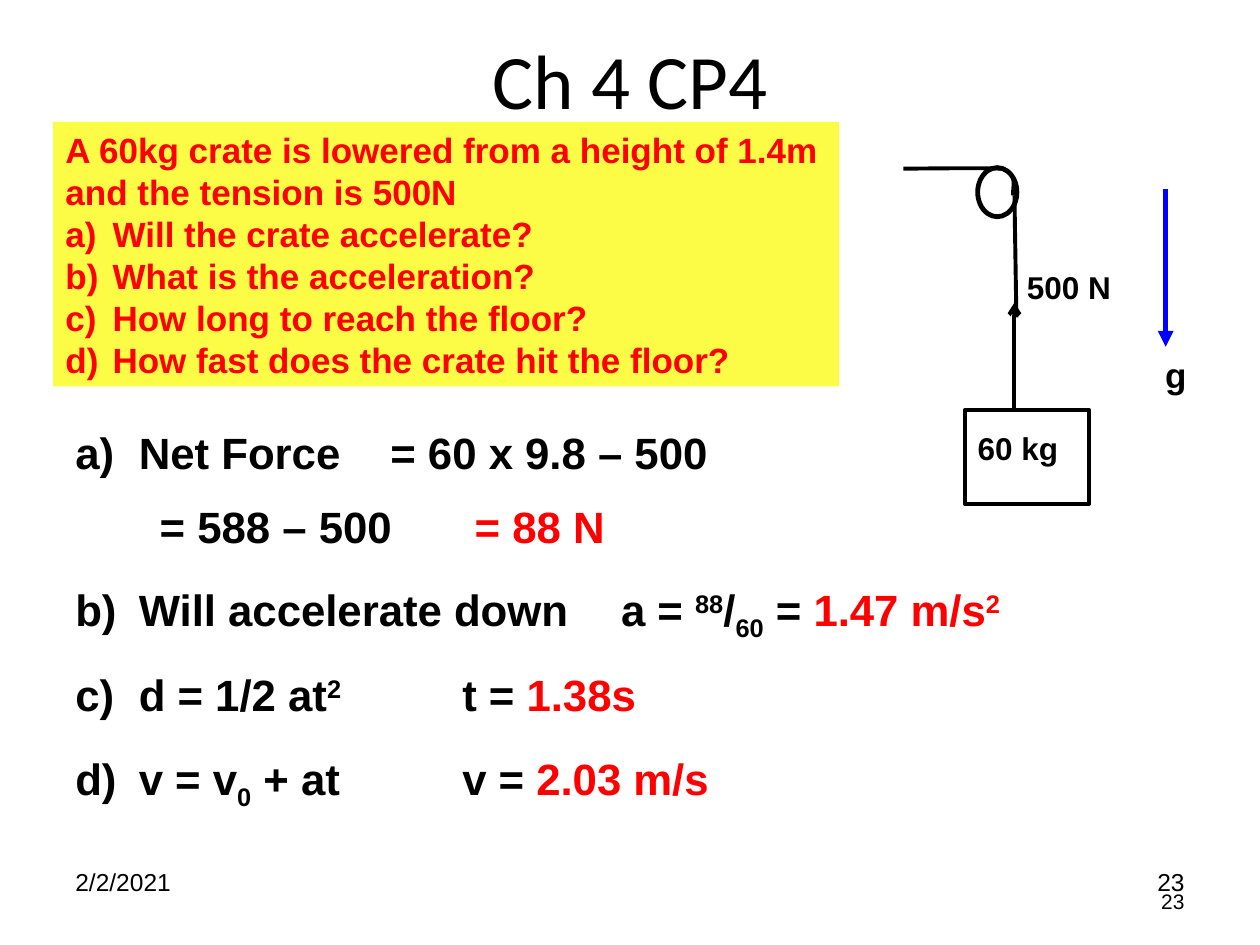
"""Build a physics slide about a crate lowered on a rope."""
from lxml import etree
from pptx import Presentation
from pptx.dml.color import RGBColor
from pptx.enum.shapes import MSO_CONNECTOR, MSO_SHAPE
from pptx.enum.text import MSO_ANCHOR, PP_ALIGN
from pptx.oxml.ns import qn
from pptx.util import Cm, Pt

BLACK = RGBColor(0, 0, 0)
RED = RGBColor(255, 0, 0)
BLUE = RGBColor(0, 0, 255)
YELLOW = RGBColor(0xFC, 0xFC, 0x46)
LEFT, MID, RIGHT = PP_ALIGN.LEFT, PP_ALIGN.CENTER, PP_ALIGN.RIGHT
TOP, CENTER = MSO_ANCHOR.TOP, MSO_ANCHOR.MIDDLE
RECT, OVAL = MSO_SHAPE.RECTANGLE, MSO_SHAPE.OVAL
LINE = MSO_CONNECTOR.STRAIGHT
SUP, SUB = 30000, -25000


def write(par, text, size=25, bold=True, color=BLACK, font="Arial", base=0):
    run = par.add_run()
    run.text = text
    run.font.size = Pt(size)
    run.font.bold = bold
    run.font.name = font
    run.font.color.rgb = color
    if base:
        run._r.get_or_add_rPr().set("baseline", str(base))


def bend(start, curves, steps=8):
    points = [start]
    for a, b, end in curves:
        first = points[-1]
        for step in range(1, steps + 1):
            t = step / steps
            u = 1 - t
            points.append(tuple(
                u**3 * p + 3 * u * u * t * q + 3 * u * t * t * r + t**3 * s
                for p, q, r, s in zip(first, a, b, end)))
    return points


class Page:
    def __init__(self, slide):
        self.slide = slide
        self.shapes = slide.shapes

    def text(self, box, parts, align=LEFT, anchor=TOP, wrap=True, tabs=(), **style):
        shape = self.shapes.add_textbox(*map(Cm, box))
        frame = shape.text_frame
        frame.word_wrap = wrap
        frame.vertical_anchor = anchor
        par = frame.paragraphs[0]
        par.alignment = align
        if tabs:
            stops = etree.SubElement(par._p.get_or_add_pPr(), qn("a:tabLst"))
            for stop in tabs:
                etree.SubElement(stops, qn("a:tab"), pos=str(Cm(stop)), algn="l")
        for text, extra in parts:
            write(par, text, **{**style, **extra})

    def shape(self, kind, box, fill=None, width=None):
        shape = self.shapes.add_shape(kind, *map(Cm, box))
        self.paint(shape, fill, width)
        return shape

    def paint(self, shape, fill, width):
        shape.shadow.inherit = False
        if fill is None:
            shape.fill.background()
        else:
            shape.fill.solid()
            shape.fill.fore_color.rgb = fill
        if width is None:
            shape.line.fill.background()
        else:
            shape.line.color.rgb = BLACK
            shape.line.width = Pt(width)

    def line(self, ends, color=BLACK, width=2.25, head=None):
        line = self.shapes.add_connector(LINE, *map(Cm, ends))
        line.line.color.rgb = color
        line.line.width = Pt(width)
        if head:
            etree.SubElement(line.line._get_or_add_ln(), qn("a:tailEnd"), type=head)
        etree.SubElement(line._element.spPr, qn("a:effectLst"))

    def curve(self, points, width=2.25):
        spots = [(Cm(x), Cm(y)) for x, y in points]
        path = self.shapes.build_freeform(*spots[0])
        path.add_line_segments(spots[1:], close=False)
        self.paint(path.convert_to_shape(), None, width)

    def task(self, box, intro, items):
        frame = self.shape(RECT, box, YELLOW).text_frame
        frame.word_wrap = False
        frame.vertical_anchor = TOP
        for i, text in enumerate(intro + items):
            par = frame.paragraphs[0] if i == 0 else frame.add_paragraph()
            par.alignment = LEFT
            props = par._p.get_or_add_pPr()
            props.set("marL", str(Cm(0.95)))
            props.set("indent", str(-Cm(0.95)))
            if i >= len(intro):
                etree.SubElement(props, qn("a:buFont"), typeface="+mj-lt")
                etree.SubElement(props, qn("a:buAutoNum"), type="alphaLcParenR")
            write(par, text, size=20, color=RED)


def main():
    deck = Presentation()
    deck.slide_width, deck.slide_height = Cm(25.4), Cm(19.05)
    page = Page(deck.slides.add_slide(deck.slide_layouts[6]))

    small = {"bold": False}
    page.text((18.21, 17.65, 5.92, 1.02), [("23", {})], RIGHT, CENTER, size=12, **small)
    for x, text, align in ((1.27, "2/2/2021", LEFT), (18.21, "23", RIGHT)):
        page.text((x, 17.35, 5.92, 1.32), [(text, {})], align, size=14, **small)
    page.text((1.27, 0, 22.86, 3.18), [("Ch 4 CP4", {})], MID, CENTER,
              size=44, font="Calibri", **small)

    red, sup, sub = {"color": RED}, {"base": SUP}, {"base": SUB}
    steps = (
        (1.27, 8.46, 6.35, [("a)\tNet Force", {})]),
        (7.62, 8.46, 8.05, [("= 60 x 9.8 – 500", {})]),
        (2.97, 9.96, 5.72, [("= 588 – 500", {})]),
        (9.32, 9.96, 3.81, [("= 88 N", red)]),
        (1.27, 11.63, 11.63, [("b)\tWill accelerate down", {})]),
        (12.27, 11.63, 11.63, [("a = ", {}), ("88", sup), ("/", {}), ("60", sub),
                               (" = ", {}), ("1.47 m/s", red), ("2", {**red, **sup})]),
        (1.27, 13.34, 13.34, [("c)\td = 1/2 at", {}), ("2", sup),
                              ("\tt = ", {}), ("1.38s", red)]),
        (1.27, 15.04, 13.77, [("d)\tv = v", {}), ("0", sub),
                              (" + at\tv = ", {}), ("2.03 m/s", red)]),
    )
    for x, y, wide, parts in steps:
        page.text((x, y, wide, 1.32), parts, tabs=(1.28, 7.8))

    page.task((1.07, 2.46, 15.85, 5.33),
              ["A 60kg crate is lowered from a height of 1.4m",
               "and the tension is 500N"],
              ["Will the crate accelerate?", "What is the acceleration?",
               "How long to reach the floor?",
               "How fast does the crate hit the floor?"])

    page.shape(OVAL, (19.71, 3.38, 0.79, 0.99), width=2.75)
    page.line((20.45, 3.94, 20.49, 6.4))
    page.line((20.45, 8.31, 20.45, 6.1), head="arrow")
    page.text((20.45, 5.28, 3.25, 1.02), [("500 N", {})], size=18)
    page.text((19.46, 8.53, 2.74, 1.02), [("60 kg", {})], size=18)
    page.curve(bend((20.42, 3.94), (
        ((20.42, 3.78), (20.47, 3.61), (20.37, 3.51)),
        ((20.32, 3.45), (20.24, 3.4), (20.19, 3.4)),
        ((19.53, 3.38), (18.87, 3.4), (18.21, 3.4)))))
    page.shape(RECT, (19.46, 8.26, 2.49, 1.91), width=2.25)
    page.line((23.5, 3.81, 23.5, 6.99), BLUE, 3, "triangle")
    page.text((23.24, 7.01, 0.94, 1.09), [("g", {})], wrap=False, size=20)

    deck.save("out.pptx")


if __name__ == "__main__":
    main()
